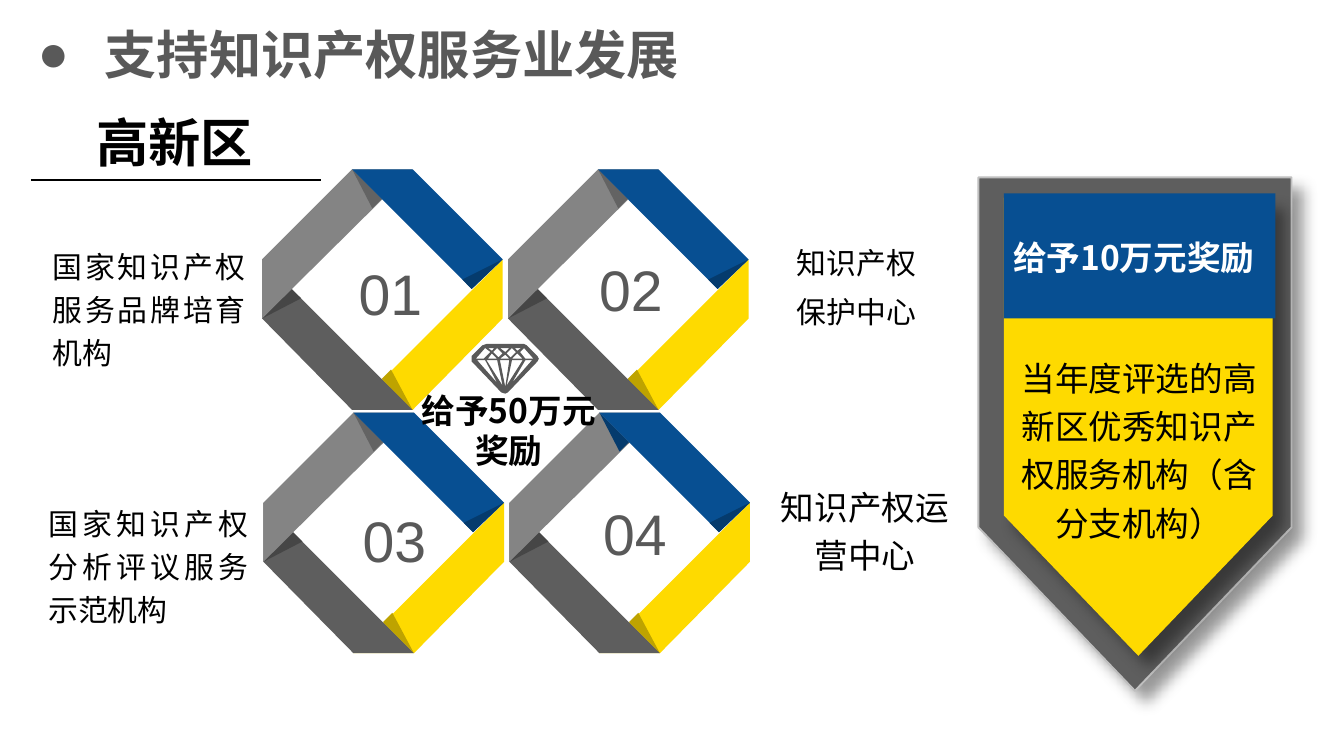
from typing import NamedTuple

from lxml.etree import SubElement
from pptx import Presentation
from pptx.dml.color import RGBColor
from pptx.enum.shapes import MSO_CONNECTOR, MSO_SHAPE
from pptx.enum.text import MSO_ANCHOR, MSO_AUTO_SIZE, PP_ALIGN as Align
from pptx.oxml.ns import qn
from pptx.util import Inches, Pt

COLORS = {
    "yellow": "FEDA00", "yellow_fold": "BEA300",
    "dark_gray": "5E5E5E", "dark_fold": "464646",
    "light_gray": "848484", "light_fold": "636363",
    "blue": "074F92", "blue_fold": "053B6D",
    "silver": "BFBFBF", "gray_text": "595959",
    "black": "000000", "white": "FFFFFF",
}
CJK = "Noto Sans CJK SC"
Points = list[tuple[float, float]]


class Facet(NamedTuple):
    color: str
    points: Points


class Ring(NamedTuple):
    dx: float
    dy: float
    top_fold: str = "light_fold"


class Label(NamedTuple):
    left: float
    top: float
    width: float
    height: float
    lines: list[str]
    size: float
    font: str = "Arial"
    color: str = "black"
    bold: bool = False
    align: Align = Align.LEFT
    spacing: float | None = None
    inset: tuple[float, float] = (0, 0)
    wrap: bool = True
    grow: bool = True


# Ribbon facets of the top-left ring; the other rings are shifted by dx, dy.
RING_FACETS = [
    Facet("yellow", [(3.07, 3.05), (3.74, 2.37), (3.74, 1.93), (2.62, 3.05)]),
    Facet("yellow_fold", [(3.07, 3.05), (2.84, 2.82), (2.91, 2.75)]),
    Facet("dark_gray", [(1.95, 1.93), (1.95, 2.37), (2.62, 3.05), (3.07, 3.05)]),
    Facet("dark_fold", [(1.95, 2.37), (2.17, 2.15), (2.24, 2.22)]),
    Facet("light_gray", [(2.62, 1.26), (1.95, 1.93), (1.95, 2.37), (3.07, 1.26)]),
    Facet("light_fold", [(2.62, 1.26), (2.84, 1.48), (2.77, 1.55)]),
    Facet("blue", [(3.07, 1.26), (2.62, 1.26), (3.51, 2.15), (3.74, 1.93)]),
    Facet("blue_fold", [(3.74, 1.93), (3.51, 2.15), (3.44, 2.08)]),
]
RINGS = [Ring(0, 0), Ring(0.01, 1.81), Ring(1.83, 0), Ring(1.84, 1.81, "blue_fold")]

# Outline of the gem first, then the cut-out facets.
GEM = [
    [(3.51, 2.65), (3.59, 2.57), (3.62, 2.56), (3.9, 2.56), (3.92, 2.57), (4, 2.65),
     (4.01, 2.67), (4, 2.69), (3.78, 2.92), (3.76, 2.93), (3.73, 2.92), (3.51, 2.69),
     (3.51, 2.67)],
    [(3.61, 2.59), (3.65, 2.62), (3.6, 2.67), (3.54, 2.67)],
    [(3.91, 2.67), (3.87, 2.62), (3.9, 2.59), (3.97, 2.67)],
    [(3.91, 2.68), (3.96, 2.68), (3.81, 2.85)],
    [(3.7, 2.85), (3.55, 2.68), (3.61, 2.68)],
    [(3.7, 2.68), (3.74, 2.87), (3.62, 2.68)],
    [(3.66, 2.63), (3.7, 2.67), (3.63, 2.67)],
    [(3.66, 2.61), (3.63, 2.59), (3.68, 2.59)],
    [(3.76, 2.62), (3.72, 2.59), (3.79, 2.59)],
    [(3.83, 2.59), (3.88, 2.59), (3.85, 2.61)],
    [(3.81, 2.67), (3.85, 2.63), (3.89, 2.67)],
    [(3.81, 2.68), (3.89, 2.68), (3.77, 2.87)],
    [(3.79, 2.68), (3.76, 2.88), (3.72, 2.68)],
    [(3.71, 2.66), (3.67, 2.62), (3.7, 2.59), (3.74, 2.63)],
    [(3.77, 2.63), (3.81, 2.59), (3.84, 2.62), (3.8, 2.66)],
    [(3.79, 2.67), (3.72, 2.67), (3.76, 2.64)],
]

NUMBERS = [
    Label(left, top, width, 0.53, [number], 30.6, color="gray_text",
          inset=(0.1, 0.05), wrap=False, grow=False)
    for number, left, top, width in [
        ("01", 2.57, 1.87, 0.5), ("02", 4.36, 1.84, 0.54),
        ("04", 4.39, 3.66, 0.54), ("03", 2.6, 3.71, 0.56)]
]
TITLE = Label(0.28, 0.19, 5.04, 0.42, ["支持知识产权服务业发展"], 28, CJK, "gray_text",
              True, inset=(0, 0.05), grow=False)
RING_LABELS = [
    Label(2.97, 2.85, 1.63, 0.71, ["给予50万元奖励"], 18, CJK, bold=True,
          align=Align.CENTER, inset=(0.1, 0.05)),
    Label(0.39, 1.8, 1.44, 0.97, ["国家知识产权服务品牌培育机构"], 16,
          align=Align.JUSTIFY, spacing=1.2),
    Label(0.36, 3.71, 1.49, 0.97, ["国家知识产权分析评议服务示范机构"], 16,
          align=Align.JUSTIFY, spacing=1.2),
    Label(5.93, 1.77, 1.49, 0.67, ["知识产权", "保护中心"], 16,
          align=Align.JUSTIFY, spacing=1.2),
    Label(5.69, 3.56, 1.49, 0.73, ["知识产权运营中心"], 18, CJK,
          align=Align.CENTER, spacing=1.2),
]
BANNER_LABELS = [
    Label(7.47, 1.7, 1.93, 0.36, ["给予10万元奖励"], 18, CJK, "white", True,
          Align.CENTER, 1.2),
    Label(7.57, 2.6, 1.81, 1.45, ["当年度评选的高新区优秀知识产权服务机构（含分支机构）"], 18,
          align=Align.CENTER, spacing=1.2),
]
DISTRICT = Label(0.62, 0.77, 1.62, 0.57, ["高新区"], 28, bold=True, inset=(0.1, 0.05))


def rgb(name: str) -> RGBColor:
    return RGBColor.from_string(COLORS[name])


def paint(shape, color: str) -> None:
    shape.shadow.inherit = False
    shape.fill.solid()
    shape.fill.fore_color.rgb = rgb(color)
    shape.line.fill.background()


def draw_outline(shapes, contours: list[Points], color: str) -> None:
    """Draw closed contours as one shape; inner contours become holes."""
    scaled = [[(Inches(x), Inches(y)) for x, y in points] for points in contours]
    builder = shapes.build_freeform(*scaled[0][0], scale=1.0)
    for index, points in enumerate(scaled):
        if index:
            builder.move_to(*points[0])
        builder.add_line_segments(points[1:], close=True)
    paint(builder.convert_to_shape(), color)


def draw_ring(shapes, ring: Ring) -> None:
    for facet in RING_FACETS:
        color = ring.top_fold if facet.color == "light_fold" else facet.color
        draw_outline(shapes, [[(x + ring.dx, y + ring.dy) for x, y in facet.points]], color)


def draw_label(shapes, label: Label):
    box = shapes.add_textbox(*map(Inches, label[:4]))
    frame = box.text_frame
    frame.text = "\n".join(label.lines)
    frame.word_wrap = label.wrap
    frame.auto_size = MSO_AUTO_SIZE.SHAPE_TO_FIT_TEXT if label.grow else MSO_AUTO_SIZE.NONE
    frame.margin_left = frame.margin_right = Inches(label.inset[0])
    frame.margin_top = frame.margin_bottom = Inches(label.inset[1])
    for index, paragraph in enumerate(frame.paragraphs):
        paragraph.alignment = label.align
        if label.spacing:
            paragraph.line_spacing = label.spacing
        if index:
            paragraph.space_before = Pt(0.2 * label.size)
        for run in paragraph.runs:
            run.font.size = Pt(label.size)
            run.font.name = label.font
            run.font.bold = label.bold
            run.font.color.rgb = rgb(label.color)
            SubElement(run.font._element, qn("a:ea"), typeface=CJK)
    return box


def draw_title(shapes) -> None:
    frame = draw_label(shapes, TITLE).text_frame
    frame.vertical_anchor = MSO_ANCHOR.MIDDLE
    properties = frame.paragraphs[0]._p.get_or_add_pPr()
    properties.set("marL", str(Inches(0.5)))
    properties.set("indent", str(Inches(-0.5)))
    SubElement(properties, qn("a:buFont"), typeface="Arial")
    SubElement(properties, qn("a:buChar"), char="●")


def draw_banner(shapes, left: float, top: float, width: float, height: float, color: str):
    """Draw a pentagon pointing down, with a soft shadow to the lower right."""
    banner = shapes.add_shape(MSO_SHAPE.DOWN_ARROW, *map(Inches, (left, top, width, height)))
    banner.adjustments[0] = 1
    banner.adjustments[1] = 0.522
    paint(banner, color)
    effects = banner._element.spPr.find(qn("a:effectLst"))
    shadow = SubElement(effects, qn("a:outerShdw"), blurRad=str(Pt(8)), dist=str(Pt(8)),
                        dir=str(45 * 60000), algn="tl", rotWithShape="0")
    tint = SubElement(shadow, qn("a:srgbClr"), val=COLORS["black"])
    SubElement(tint, qn("a:alpha"), val="40000")
    return banner


def main() -> None:
    deck = Presentation()
    deck.slide_width = Inches(10)
    deck.slide_height = deck.slide_width * 9 // 16
    shapes = deck.slides.add_slide(deck.slide_layouts[6]).shapes

    ring_group = shapes.add_group_shape().shapes
    for ring in RINGS:
        draw_ring(ring_group, ring)
    for number in NUMBERS:
        draw_label(ring_group, number)
    draw_outline(ring_group, GEM, "gray_text")

    draw_title(shapes)
    for label in RING_LABELS:
        draw_label(shapes, label)

    frame_banner = draw_banner(shapes, 7.28, 1.32, 2.33, 3.82, "dark_gray")
    frame_banner.line.color.rgb = rgb("silver")
    frame_banner.line.width = Pt(1)
    draw_banner(shapes, 7.47, 1.47, 2, 3.41, "yellow")
    header = shapes.add_shape(MSO_SHAPE.RECTANGLE, *map(Inches, (7.47, 1.44, 2.02, 0.93)))
    paint(header, "blue")
    for label in BANNER_LABELS:
        draw_label(shapes, label)

    underline = shapes.add_connector(
        MSO_CONNECTOR.STRAIGHT, *map(Inches, (0.23, 1.34, 2.39, 1.34)))
    underline.line.color.rgb = rgb("black")
    underline.line.width = Pt(0.75)
    SubElement(underline._element.spPr, qn("a:effectLst"))
    draw_label(shapes, DISTRICT)

    deck.save("out.pptx")


if __name__ == "__main__":
    main()
